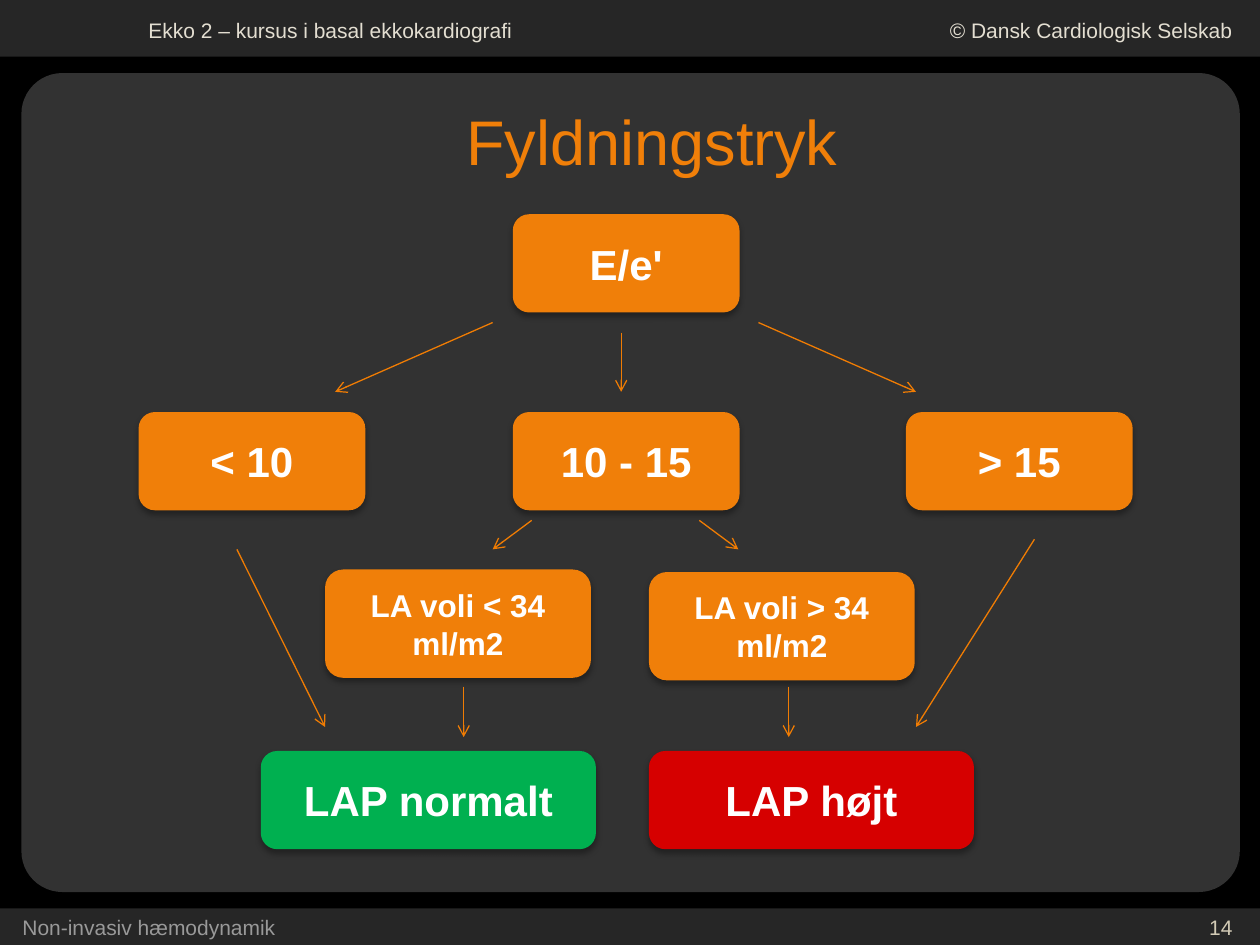
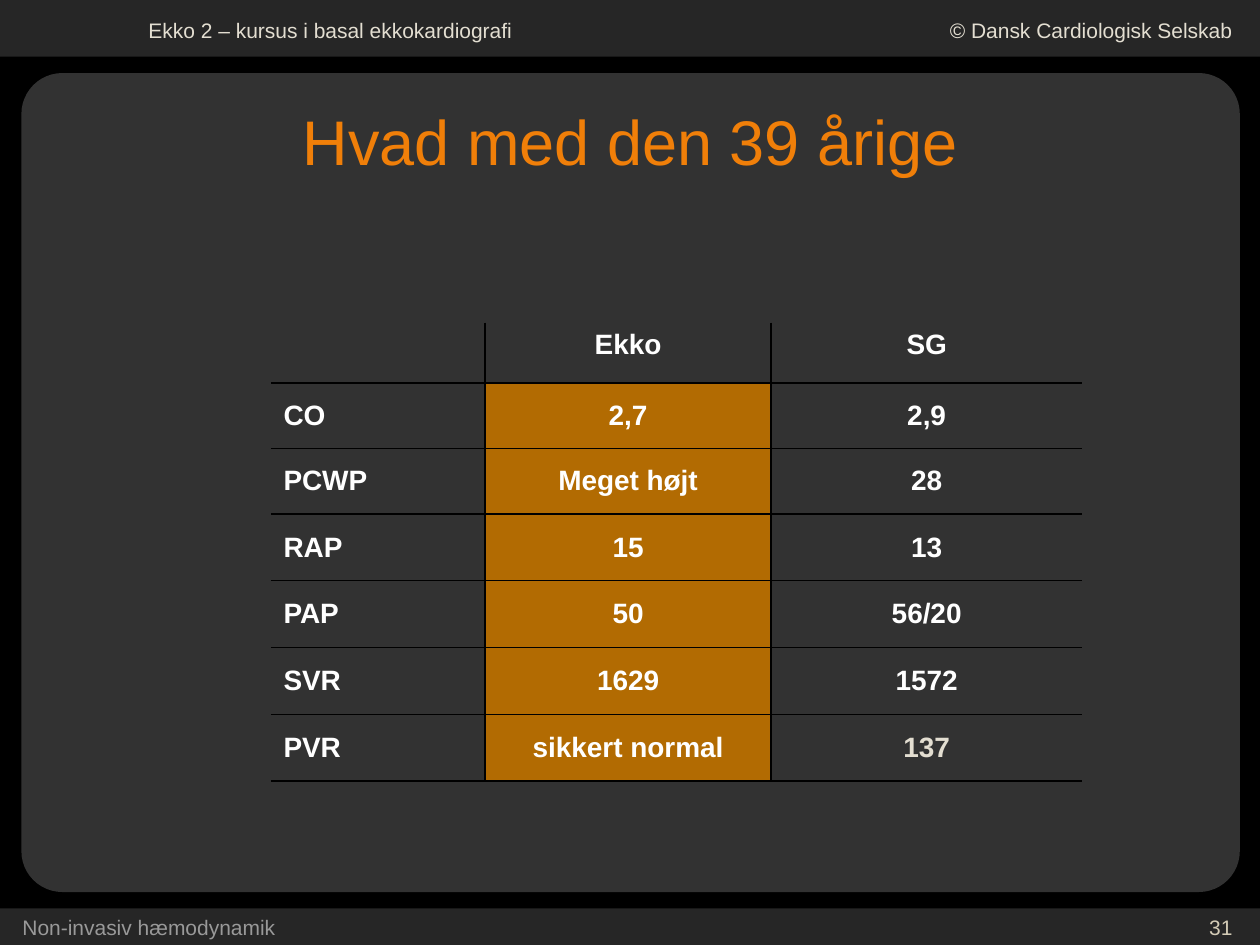
from lxml.etree import SubElement
from pptx import Presentation
from pptx.dml.color import RGBColor
from pptx.enum.shapes import MSO_CONNECTOR, MSO_SHAPE
from pptx.enum.text import MSO_ANCHOR, PP_ALIGN
from pptx.oxml.ns import qn
from pptx.util import Inches, Pt

FONT = "Arial"
BLACK, BAND, PANEL = "000000", "262626", "323232"
ORANGE, ARROW, BROWN = "F07F09", "F07C03", "B26B02"
GREEN, RED, WHITE = "00B050", "D60000", "FFFFFF"
CREAM, NUMBER, GREY = "E3DED1", "D3CBB6", "999999"
LEFT, CENTER, RIGHT = PP_ALIGN.LEFT, PP_ALIGN.CENTER, PP_ALIGN.RIGHT
NO_STYLE = "{2D5ABB26-0587-4C30-8999-92F81FD0307C}"


def write(tf, text, size, color, align=CENTER, bold=False):
    tf.text = text
    tf.word_wrap = True
    p = tf.paragraphs[0]
    p.alignment = align
    font = p.runs[0].font
    font.name, font.size, font.bold = FONT, Pt(size), bold
    font.color.rgb = RGBColor.from_string(color)


def add_box(s, preset, at, fill):
    sp = s.shapes.add_shape(preset, *[Inches(v) for v in at])
    sp.shadow.inherit = False
    sp.fill.solid()
    sp.fill.fore_color.rgb = RGBColor.from_string(fill)
    sp.line.fill.background()
    return sp


prs = Presentation()
prs.slide_width, prs.slide_height = Inches(10), Inches(7.5)
background = prs.slide_master.background.fill
background.solid()
background.fore_color.rgb = RGBColor.from_string(BLACK)

slides = []
for title, title_at, number in [
    ("Fyldningstryk", (1.67, 0.33, 7.01, 1.57), "14"),
    ("Hvad med den 39 årige", (0.5, 0.67, 9, 0.88), "31"),
]:
    s = prs.slides.add_slide(prs.slide_layouts[5])
    slides.append(s)
    add_box(s, MSO_SHAPE.RECTANGLE, (0, 7.21, 10, 0.29), BAND)
    add_box(s, MSO_SHAPE.RECTANGLE, (0, 0, 10, 0.45), BAND)
    panel = add_box(s, MSO_SHAPE.ROUNDED_RECTANGLE, (0.17, 0.58, 9.67, 6.5), PANEL)
    panel.adjustments[0] = 0.05

    for text, at, color, align in [
        ("Ekko 2 – kursus i basal ekkokardiografi", (1.08, 0.09, 3.75, 0.3), CREAM, LEFT),
        ("© Dansk Cardiologisk Selskab", (6.89, 0.09, 2.99, 0.3), CREAM, RIGHT),
        (number, (7.55, 7.21, 2.33, 0.25), NUMBER, RIGHT),
        ("Non-invasiv hæmodynamik", (0.08, 7.21, 3.17, 0.25), GREY, LEFT),
    ]:
        label = s.shapes.add_textbox(*[Inches(v) for v in at])
        write(label.text_frame, text, 12, color, align)

    heading = s.shapes.title
    s.shapes.element.append(heading.element)
    heading.left, heading.top, heading.width, heading.height = [Inches(v) for v in title_at]
    write(heading.text_frame, title, 36, ORANGE)
    heading.text_frame.vertical_anchor = MSO_ANCHOR.MIDDLE

flow, comparison = slides

for text, at, fill, size in [
    ("E/e'", (4.07, 1.7, 1.8, 0.78), ORANGE, 24),
    ("< 10", (1.1, 3.27, 1.8, 0.78), ORANGE, 24),
    ("10 - 15", (4.07, 3.27, 1.8, 0.78), ORANGE, 24),
    ("> 15", (7.19, 3.27, 1.8, 0.78), ORANGE, 24),
    ("LA voli < 34 ml/m2", (2.58, 4.52, 2.11, 0.86), ORANGE, 18),
    ("LA voli > 34 ml/m2", (5.15, 4.54, 2.11, 0.86), ORANGE, 18),
    ("LAP normalt", (2.07, 5.96, 2.66, 0.78), GREEN, 24),
    ("LAP højt", (5.15, 5.96, 2.58, 0.78), RED, 24),
]:
    node = add_box(flow, MSO_SHAPE.ROUNDED_RECTANGLE, at, fill)
    write(node.text_frame, text, size, WHITE, bold=True)
    node.text_frame.vertical_anchor = MSO_ANCHOR.MIDDLE
    effects = node.element.spPr.find(qn("a:effectLst"))
    shadow = SubElement(effects, qn("a:outerShdw"), blurRad=str(Pt(3.5)),
                        dist=str(Pt(2.2)), dir="5400000", rotWithShape="0")
    shade = SubElement(shadow, qn("a:srgbClr"), val=BLACK)
    SubElement(shade, qn("a:alpha"), val="32000")

for ends in [
    (3.91, 2.56, 2.66, 3.11),
    (4.93, 2.64, 4.93, 3.11),
    (6.02, 2.56, 7.27, 3.11),
    (4.22, 4.13, 3.91, 4.36),
    (5.55, 4.13, 5.86, 4.36),
    (1.88, 4.36, 2.58, 5.77),
    (8.21, 4.28, 7.27, 5.77),
    (3.68, 5.45, 3.68, 5.85),
    (6.26, 5.45, 6.26, 5.85),
]:
    arrow = flow.shapes.add_connector(MSO_CONNECTOR.STRAIGHT, *[Inches(v) for v in ends])
    arrow.line.color.rgb = RGBColor.from_string(ARROW)
    arrow.line.width = Pt(0.75)
    properties = arrow.element.spPr
    SubElement(properties.find(qn("a:ln")), qn("a:tailEnd"), type="arrow")
    SubElement(properties, qn("a:effectLst"))

measurements = [
    ("", "Ekko", "SG"),
    ("CO", "2,7", "2,9"),
    ("PCWP", "Meget højt", "28"),
    ("RAP", "15", "13"),
    ("PAP", "50", "56/20"),
    ("SVR", "1629", "1572"),
    ("PVR", "sikkert normal", "137"),
]
widths = [1.98, 1.7, 2.27, 2.47]
heights = [0.48] * 2 + [0.52] * 2 + [0.53] * 5
frame = comparison.shapes.add_table(
    len(heights), len(widths), Inches(0.17), Inches(2.08),
    Inches(sum(widths)), Inches(sum(heights)))
table = frame.table
table.first_row = table.horz_banding = False
frame.element.find(".//" + qn("a:tableStyleId")).text = NO_STYLE
for column, width in zip(table.columns, widths):
    column.width = Inches(width)
for row, height in zip(table.rows, heights):
    row.height = Inches(height)

for first, last in [((0, 0), (1, 1)), ((0, 2), (0, 3)), ((2, 0), (8, 0)), ((8, 1), (8, 3))]:
    table.cell(*first).merge(table.cell(*last))

for r, values in enumerate(measurements, start=1):
    for c, text in enumerate(values, start=1):
        if not text:
            continue
        cell = table.cell(r, c)
        header = r == 1
        color = CREAM if text == "137" else WHITE
        write(cell.text_frame, text, 16, color, LEFT if c == 1 else CENTER, True)
        cell.vertical_anchor = MSO_ANCHOR.TOP if header else MSO_ANCHOR.MIDDLE
        tcPr = cell._tc.get_or_add_tcPr()
        for side, visible in [("L", c > 1), ("R", c < 3), ("T", not header), ("B", True)]:
            if visible:
                border = SubElement(tcPr, qn("a:ln" + side), w=str(Pt(1)))
                ink = SubElement(border, qn("a:solidFill"))
                SubElement(ink, qn("a:srgbClr"), val=BLACK)

for r in range(len(heights)):
    for c in range(len(widths)):
        fill = table.cell(r, c).fill
        if c == 2 and 2 <= r <= 7:
            fill.solid()
            fill.fore_color.rgb = RGBColor.from_string(BROWN)
        else:
            fill.background()

prs.save("out.pptx")
